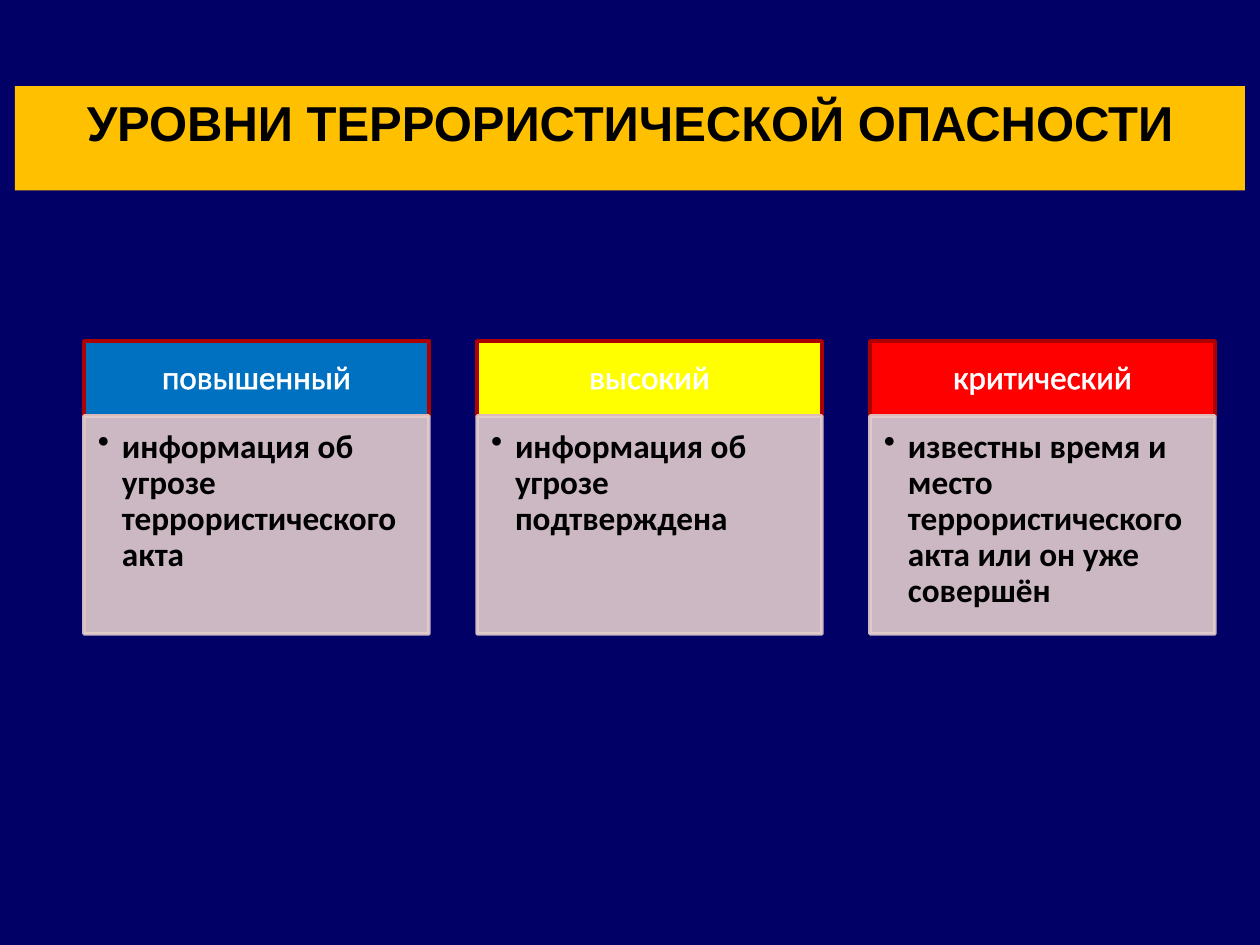
import dataclasses

import pptx
import pptx.dml.color
import pptx.enum.shapes
import pptx.enum.text
import pptx.oxml
import pptx.oxml.ns
import pptx.util
from lxml import etree

RGB = pptx.dml.color.RGBColor
ALIGN = pptx.enum.text.PP_ALIGN
ANCHOR = pptx.enum.text.MSO_ANCHOR

NAVY = RGB(0x00, 0x00, 0x66)
AMBER = RGB(0xFF, 0xC0, 0x00)
BLUE = RGB(0x00, 0x70, 0xC0)
YELLOW = RGB(0xFF, 0xFF, 0x00)
RED = RGB(0xFF, 0x00, 0x00)
DARK_RED = RGB(0xAD, 0x01, 0x01)
ROSE = RGB(0xE3, 0xCC, 0xCC)
WHITE = RGB(0xFF, 0xFF, 0xFF)
BLACK = RGB(0x00, 0x00, 0x00)

PX_PER_INCH = 126
CARD_LEFT, CARD_STEP, CARD_WIDTH = 84, 393, 345
HEAD_TOP, HEAD_HEIGHT = 341, 75
BODY_TOP, BODY_HEIGHT = HEAD_TOP + HEAD_HEIGHT, 218


@dataclasses.dataclass
class Level:
    name: str
    meaning: str
    color: RGB


LEVELS = [
    Level("повышенный", "информация об угрозе террористического акта", BLUE),
    Level("высокий", "информация об угрозе подтверждена", YELLOW),
    Level("критический",
          "известны время и место террористического акта или он уже совершён", RED),
]


def px(n: int) -> int:
    return round(n * pptx.util.Inches(1) / PX_PER_INCH)


def set_text(sp, text: str, *, size: int, color: RGB, font: str = "Calibri",
             bold: bool = False, align=ALIGN.LEFT, anchor=ANCHOR.TOP,
             spacing: float = 1.0, insets=(13, 6, 13, 6)):
    """Write one paragraph into a shape; insets are left, top, right, bottom."""
    tf = sp.text_frame
    tf.word_wrap = True
    tf.vertical_anchor = anchor
    tf.margin_left, tf.margin_top, tf.margin_right, tf.margin_bottom = map(px, insets)
    p = tf.paragraphs[0]
    p.alignment = align
    p.line_spacing = spacing
    r = p.add_run()
    r.text = text
    r.font.name = font
    r.font.size = pptx.util.Pt(size)
    r.font.bold = bold
    r.font.color.rgb = color
    return p


def add_box(s, left: int, top: int, height: int, fill: RGB, line: RGB):
    sp = s.shapes.add_shape(pptx.enum.shapes.MSO_SHAPE.RECTANGLE,
                            px(left), px(top), px(CARD_WIDTH), px(height))
    sp.shadow.inherit = False
    sp.fill.solid()
    sp.fill.fore_color.rgb = fill
    sp.line.color.rgb = line
    sp.line.width = pptx.util.Pt(2)
    return sp


def set_alpha(sp, percent: int) -> None:
    """Make the fill and the line of a shape partly transparent."""
    for color in sp._element.spPr.iter(pptx.oxml.ns.qn("a:srgbClr")):
        alpha = etree.SubElement(color, pptx.oxml.ns.qn("a:alpha"))
        alpha.set("val", str(percent * 1000))


def outline_text(p, color: RGB, width: float) -> None:
    ln = pptx.oxml.parse_xml(
        f'<a:ln {pptx.oxml.ns.nsdecls("a")} w="{int(pptx.util.Pt(width))}">'
        f'<a:solidFill><a:srgbClr val="{color}"/></a:solidFill></a:ln>')
    p.runs[0].font._element.insert(0, ln)


def add_bullet(p, indent: int) -> None:
    p_pr = p._p.get_or_add_pPr()
    p_pr.set("marL", str(px(indent)))
    p_pr.set("indent", str(-px(indent)))
    etree.SubElement(p_pr, pptx.oxml.ns.qn("a:buChar")).set("char", "•")


def add_level(s, level: Level, left: int) -> None:
    # Coloured heading
    head = add_box(s, left, HEAD_TOP, HEAD_HEIGHT, level.color, DARK_RED)
    p = set_text(head, level.name, size=19, color=WHITE, align=ALIGN.CENTER,
                 anchor=ANCHOR.MIDDLE, spacing=0.9, insets=(19, 10, 19, 10))
    outline_text(p, WHITE, 1.45)

    # Explanation below it
    body = add_box(s, left, BODY_TOP, BODY_HEIGHT, ROSE, ROSE)
    set_alpha(body, 90)
    p = set_text(body, level.meaning, size=19, color=BLACK, bold=True,
                 spacing=0.9, insets=(14, 14, 19, 21))
    add_bullet(p, 24)


def add_title(s, text: str) -> None:
    sp = s.shapes.title
    sp.left, sp.top, sp.width, sp.height = map(px, (15, 86, 1230, 72))
    sp.fill.solid()
    sp.fill.fore_color.rgb = AMBER
    set_text(sp, text, size=28, color=BLACK, font="Arial", bold=True,
             align=ALIGN.CENTER)
    sp.text_frame.auto_size = pptx.enum.text.MSO_AUTO_SIZE.SHAPE_TO_FIT_TEXT


def main() -> None:
    prs = pptx.Presentation()
    prs.slide_width, prs.slide_height = px(1260), px(945)
    s = prs.slides.add_slide(prs.slide_layouts.get_by_name("Title Only"))
    s.background.fill.solid()
    s.background.fill.fore_color.rgb = NAVY

    add_title(s, "УРОВНИ ТЕРРОРИСТИЧЕСКОЙ ОПАСНОСТИ")
    for i, level in enumerate(LEVELS):
        add_level(s, level, CARD_LEFT + i * CARD_STEP)
    prs.save("out.pptx")


if __name__ == "__main__":
    main()
